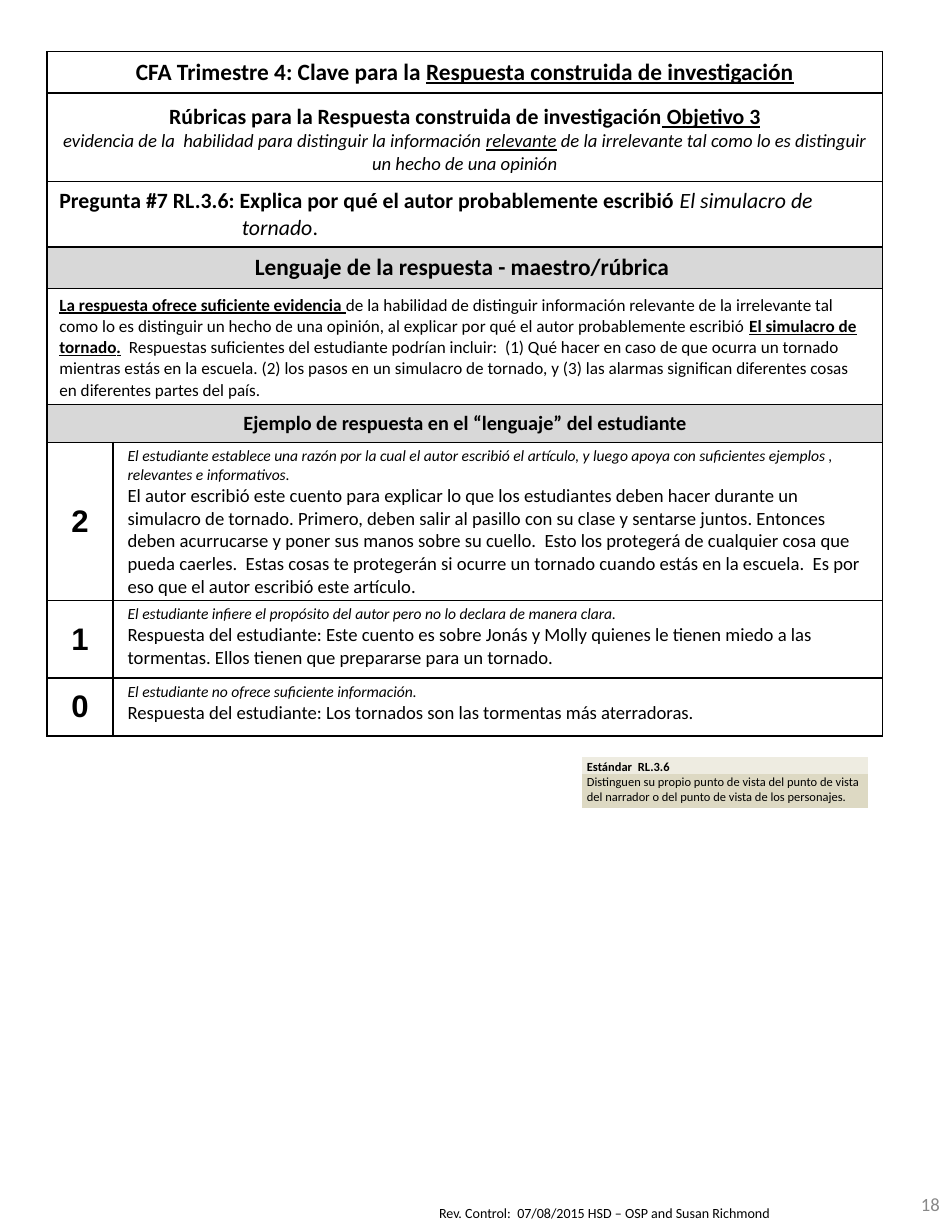
from lxml.etree import SubElement
from pptx import Presentation
from pptx.dml.color import RGBColor
from pptx.enum.text import MSO_ANCHOR, PP_ALIGN
from pptx.oxml.ns import qn
from pptx.util import Inches, Pt

BLACK, GRAY = "000000", "D8D8D8"
LEFT, CENTER, RIGHT = PP_ALIGN.LEFT, PP_ALIGN.CENTER, PP_ALIGN.RIGHT
TOP, MIDDLE = MSO_ANCHOR.TOP, MSO_ANCHOR.MIDDLE
WIDE_INSETS, ANSWER_INSETS, STANDARD_INSETS = (0.11, 0.06), (0.13, 0.04), (0.04, 0)

# A paragraph is (alignment, line spacing, runs); a run is (text, size, style letters b, i, u).
HEADING_ROWS = [
    (0.37, None, [(CENTER, 1, [
        ("CFA Trimestre 4: Clave para la ", 15, "b"),
        ("Respuesta construida de investigación", 15, "bu")])]),
    (0.57, None, [
        (CENTER, 1.15, [
            ("Rúbricas para la Respuesta construida de investigación", 14, "b"),
            (" Objetivo 3", 14, "bu")]),
        (CENTER, 1, [
            ("evidencia de la  habilidad para distinguir la información ", 12, "i"),
            ("relevante", 12, "iu"),
            (" de la irrelevante tal como lo es distinguir un hecho de una opinión", 12, "i")])]),
    (0.39, None, [(LEFT, 1, [
        ("Pregunta #7 RL.3.6: Explica por qué el autor probablemente escribió ", 14, "b"),
        ("El simulacro de tornado", 14, "i"),
        (".", 14, "")])]),
    (0.37, GRAY, [(CENTER, 1, [("Lenguaje de la respuesta - maestro/rúbrica ", 15, "b")])]),
    (0.88, None, [(LEFT, 1, [
        ("La respuesta ofrece suficiente evidencia ", 11, "bu"),
        ("de la habilidad de distinguir información relevante de la irrelevante tal como lo es "
         "distinguir un hecho de una opinión, al explicar por qué el autor probablemente "
         "escribió ", 11, ""),
        ("El simulacro de tornado", 11, "bu"),
        (".", 11, "biu"),
        ("  ", 11, "bi"),
        ("Respuestas suficientes del estudiante podrían incluir:  (1) Qué hacer en caso de que "
         "ocurra un tornado mientras estás en la escuela. (2) los pasos en un simulacro de "
         "tornado, y (3) las alarmas significan diferentes cosas en diferentes partes del país.",
         11, "")])]),
    (0.33, GRAY, [(CENTER, 1, [
        ("Ejemplo de respuesta en el “lenguaje” del estudiante", 13, "b")])]),
]
QUESTION_ROW = 2

SCORE_ROWS = [
    (0.86, "2",
     "El estudiante establece una razón por la cual el autor escribió el artículo, y luego apoya "
     "con suficientes ejemplos , relevantes e informativos.",
     "El autor escribió este cuento para explicar lo que los estudiantes deben hacer durante un "
     "simulacro de tornado. Primero, deben salir al pasillo con su clase y sentarse juntos. "
     "Entonces deben acurrucarse y poner sus manos sobre su cuello.  Esto los protegerá de "
     "cualquier cosa que pueda caerles.  Estas cosas te protegerán si ocurre un tornado cuando "
     "estás en la escuela.  Es por eso que el autor escribió este artículo."),
    (0.69, "1",
     "El estudiante infiere el propósito del autor pero no lo declara de manera clara.",
     "Respuesta del estudiante: Este cuento es sobre Jonás y Molly quienes le tienen miedo a las "
     "tormentas. Ellos tienen que prepararse para un tornado."),
    (0.52, "0",
     "El estudiante no ofrece suficiente información.",
     "Respuesta del estudiante: Los tornados son las tormentas más aterradoras."),
]

STANDARD_ROWS = [
    (0.11, "EEECE1", MIDDLE, [(LEFT, 1.15, [("Estándar  RL.3.6", 8, "b")])]),
    (0.3, "DDD9C3", TOP, [(LEFT, 1, [
        ("Distinguen su propio punto de vista del punto de vista del narrador o del punto de "
         "vista de los personajes.", 8, "")])]),
]


def color(value):
    return RGBColor.from_string(value)


def write(text_frame, paragraphs, font="Calibri", text_color=BLACK):
    for index, (alignment, spacing, runs) in enumerate(paragraphs):
        paragraph = text_frame.add_paragraph() if index else text_frame.paragraphs[0]
        paragraph.alignment = alignment
        paragraph.line_spacing = spacing
        for text, size, style in runs:
            run = paragraph.add_run()
            run.text = text
            run.font.name = font
            run.font.size = Pt(size)
            run.font.color.rgb = color(text_color)
            run.font.bold = "b" in style
            run.font.italic = "i" in style
            run.font.underline = "u" in style


def set_insets(holder, insets):
    holder.margin_left = holder.margin_right = Inches(insets[0])
    holder.margin_top = holder.margin_bottom = Inches(insets[1])


def set_borders(cell, width):
    """Draw black lines of this width in points on all four sides; 0 hides them."""
    properties = cell._tc.get_or_add_tcPr()
    for side in ("a:lnL", "a:lnR", "a:lnT", "a:lnB"):
        line = SubElement(properties, qn(side), w=str(Pt(width)))
        if width:
            fill = SubElement(line, qn("a:solidFill"))
            SubElement(fill, qn("a:srgbClr"), val=BLACK)
        else:
            SubElement(line, qn("a:noFill"))


def fill_cell(cell, paragraphs, insets, fill=None, anchor=TOP, font="Calibri"):
    set_insets(cell, insets)
    cell.vertical_anchor = anchor
    if fill:
        cell.fill.solid()
        cell.fill.fore_color.rgb = color(fill)
    else:
        cell.fill.background()
    write(cell.text_frame, paragraphs, font)


def add_plain_table(slide, left, top, widths, heights, border):
    frame = slide.shapes.add_table(len(heights), len(widths), Inches(left), Inches(top),
                                   Inches(sum(widths)), Inches(sum(heights)))
    table = frame.table
    table.first_row = table.horz_banding = False
    for column, width in zip(table.columns, widths):
        column.width = Inches(width)
    for row, height in zip(table.rows, heights):
        row.height = Inches(height)
    for cell in table.iter_cells():
        set_borders(cell, border)
    return table


def add_rubric(slide):
    heights = [row[0] for row in HEADING_ROWS + SCORE_ROWS]
    table = add_plain_table(slide, 0.42, 0.46, [0.59, 6.87], heights, 1)
    for index, (_, fill, paragraphs) in enumerate(HEADING_ROWS):
        table.cell(index, 0).merge(table.cell(index, 1))
        fill_cell(table.cell(index, 0), paragraphs, WIDE_INSETS, fill)
    question = table.cell(QUESTION_ROW, 0).text_frame.paragraphs[0]
    indent = Inches(1.63)
    question_properties = question._p.get_or_add_pPr()
    question_properties.set("marL", str(indent))
    question_properties.set("indent", str(-indent))
    for index, (_, score, criterion, answer) in enumerate(SCORE_ROWS, len(HEADING_ROWS)):
        fill_cell(table.cell(index, 0), [(CENTER, 1, [(score, 20, "b")])],
                  WIDE_INSETS, anchor=MIDDLE, font="Arial")
        fill_cell(table.cell(index, 1),
                  [(LEFT, 1, [(criterion, 10, "i")]), (LEFT, 1, [(answer, 12, "")])],
                  ANSWER_INSETS)


def add_standard(slide):
    table = add_plain_table(slide, 5.2, 6.76, [2.55], [row[0] for row in STANDARD_ROWS], 0)
    for index, (_, fill, anchor, paragraphs) in enumerate(STANDARD_ROWS):
        fill_cell(table.cell(index, 0), paragraphs, STANDARD_INSETS, fill, anchor)


def add_label(slide, box, text, size, text_color, alignment, anchor, insets):
    text_frame = slide.shapes.add_textbox(*map(Inches, box)).text_frame
    text_frame.word_wrap = True
    text_frame.vertical_anchor = anchor
    set_insets(text_frame, insets)
    write(text_frame, [(alignment, 1, [(text, size, "")])], text_color=text_color)


def main():
    presentation = Presentation()
    presentation.slide_width, presentation.slide_height = Inches(8.5), Inches(11)
    slide = presentation.slides.add_slide(presentation.slide_layouts[6])
    add_label(slide, (3.81, 10.71, 4.25, 0.26),
              "Rev. Control:  07/08/2015 HSD – OSP and Susan Richmond",
              9, BLACK, LEFT, TOP, (0.11, 0.05))
    add_label(slide, (7.58, 10.5, 0.92, 0.5), "18", 12, "888888", RIGHT, MIDDLE, WIDE_INSETS)
    add_rubric(slide)
    add_standard(slide)
    presentation.save("out.pptx")


if __name__ == "__main__":
    main()
